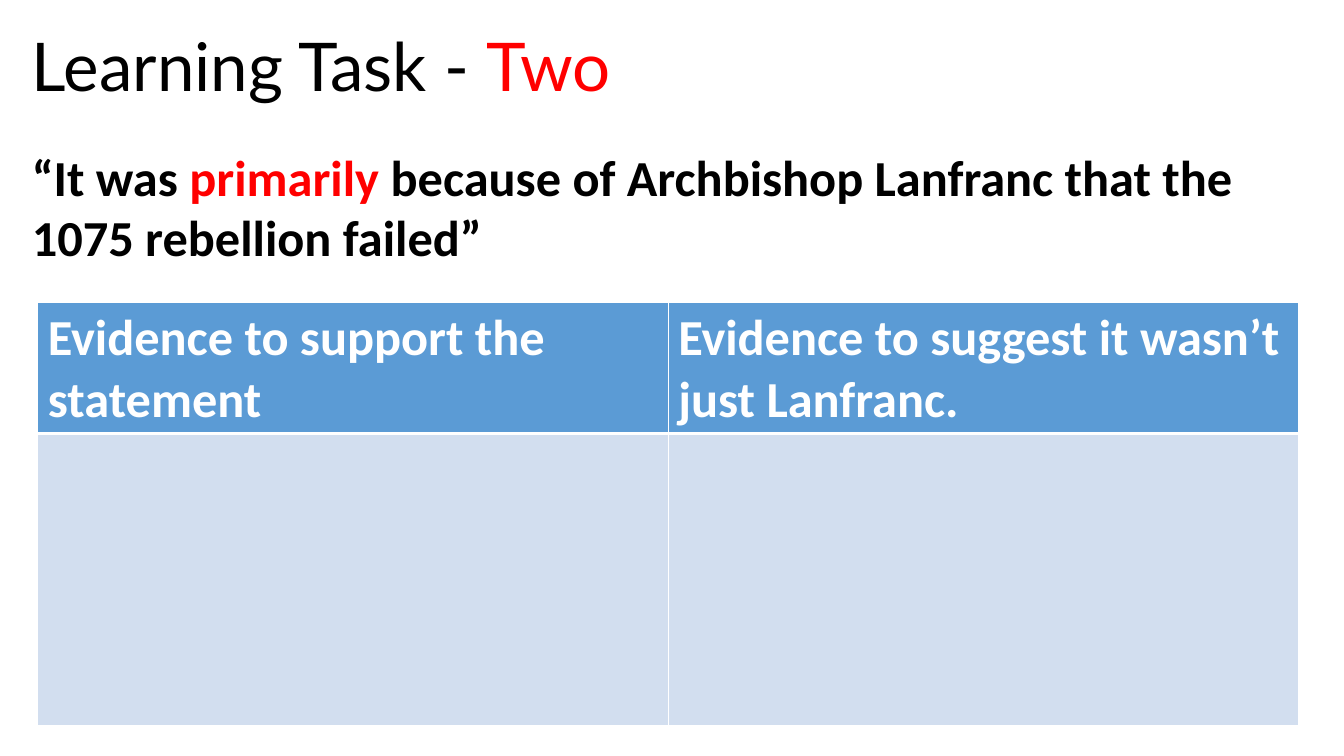
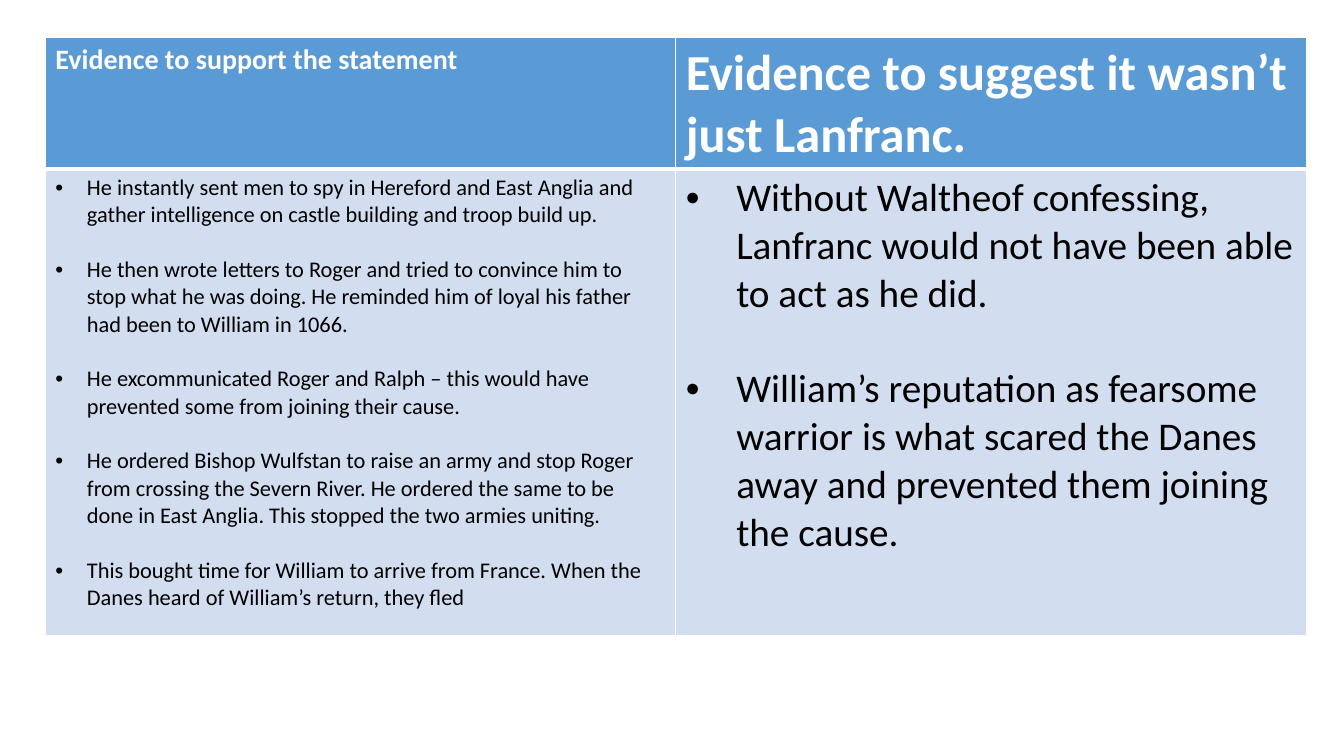
from dataclasses import dataclass

from lxml import etree
from pptx import Presentation
from pptx import util as u
from pptx.dml.color import RGBColor
from pptx.enum import text
from pptx.oxml import ns

W, H = 13.33, 7.5
COLS, ROWS = 160, 90
BLACK, WHITE, RED = "000000", "FFFFFF", "FF0000"
HEADER_FILL, BODY_FILL = "5B9BD5", "D2DEEF"
TITLE_FONT, FONT = "Lato", "Calibri"
LINE_SPACING = 1.22
THIN, THICK = 1, 3


@dataclass
class Box:
    left: float
    top: float
    width: float
    height: float

    def emu(self):
        return x(self.left), y(self.top), x(self.width), y(self.height)


@dataclass
class Style:
    size: float
    font: str = FONT
    bold: bool = False


@dataclass
class Span:
    text: str
    color: str = BLACK


@dataclass
class Column:
    header: str
    header_size: float = 36
    bullets: tuple[str, ...] = ()
    size: float = 16
    indent: float = 0


@dataclass
class Evidence:
    left: float
    top: float
    body_rows: float
    columns: tuple[Column, ...]
    width: float = 150.1
    header_rows: float = 15.6


def x(cols: float) -> int:
    return u.Inches(W * cols / COLS)


def y(rows: float) -> int:
    return u.Inches(H * rows / ROWS)


def rgb(value: str) -> RGBColor:
    return RGBColor.from_string(value)


def format_run(r, style: Style, color: str) -> None:
    r.font.size = u.Pt(style.size)
    r.font.name = style.font
    r.font.bold = style.bold
    r.font.color.rgb = rgb(color)


def add_text(s, box: Box, spans: list[Span], style: Style) -> None:
    tf = s.shapes.add_textbox(*box.emu()).text_frame
    tf.word_wrap = True
    tf.auto_size = text.MSO_AUTO_SIZE.SHAPE_TO_FIT_TEXT
    for span in spans:
        r = tf.paragraphs[0].add_run()
        r.text = span.text
        format_run(r, style, span.color)


def add_bullet(p, indent: float) -> None:
    pPr = p._p.get_or_add_pPr()
    pPr.set("marL", str(x(indent)))
    pPr.set("indent", str(-x(indent)))
    etree.SubElement(pPr, ns.qn("a:buFont"), typeface="Arial")
    etree.SubElement(pPr, ns.qn("a:buChar"), char="•")


def style_cell(cell, fill: str, top: float, bottom: float) -> None:
    cell.fill.solid()
    cell.fill.fore_color.rgb = rgb(fill)
    tcPr = cell._tc.get_or_add_tcPr()
    widths = {"a:lnL": THIN, "a:lnR": THIN, "a:lnT": top, "a:lnB": bottom}
    for i, (tag, width) in enumerate(widths.items()):
        ln = etree.Element(ns.qn(tag), w=str(u.Pt(width)))
        solid = etree.SubElement(ln, ns.qn("a:solidFill"))
        etree.SubElement(solid, ns.qn("a:srgbClr"), val=WHITE)
        tcPr.insert(i, ln)


def fill_header(cell, column: Column) -> None:
    style_cell(cell, HEADER_FILL, THIN, THICK)
    p = cell.text_frame.paragraphs[0]
    p.text = column.header
    format_run(p.runs[0], Style(column.header_size, bold=True), WHITE)


def fill_body(cell, column: Column) -> None:
    style_cell(cell, BODY_FILL, THICK, THIN)
    tf = cell.text_frame
    for i, bullet in enumerate(column.bullets):
        p = tf.add_paragraph() if i else tf.paragraphs[0]
        p.text = bullet
        if i:
            p.space_before = u.Pt(column.size * LINE_SPACING)
        add_bullet(p, column.indent)
        format_run(p.runs[0], Style(column.size), BLACK)


def add_evidence(s, evidence: Evidence) -> None:
    heights = evidence.header_rows, evidence.body_rows
    box = Box(evidence.left, evidence.top, evidence.width, sum(heights))
    count = len(evidence.columns)
    table = s.shapes.add_table(len(heights), count, *box.emu()).table
    for row, height in zip(table.rows, heights):
        row.height = y(height)
    for i, column in enumerate(evidence.columns):
        table.columns[i].width = x(evidence.width / count)
        fill_header(table.cell(0, i), column)
        fill_body(table.cell(1, i), column)


SUPPORT = "Evidence to support the statement"
AGAINST = "Evidence to suggest it wasn’t just Lanfranc."

TITLE = [Span("Learning Task - "), Span("Two", RED)]
QUOTE = [
    Span("“It was "),
    Span("primarily", RED),
    Span(" because of Archbishop Lanfranc that the 1075 rebellion failed”"),
]
TASK = Evidence(4.5, 36, 34.8, (Column(SUPPORT), Column(AGAINST)))
ANSWERS = Evidence(5.4, 4.5, 55.6, (
    Column(SUPPORT, 20, (
        "He instantly sent men to spy in Hereford and East Anglia and gather "
        "intelligence on castle building and troop build up.",
        "He then wrote letters to Roger and tried to convince him to stop what "
        "he was doing. He reminded him of loyal his father had been to William "
        "in 1066.",
        "He excommunicated Roger and Ralph – this would have prevented some "
        "from joining their cause.",
        "He ordered Bishop Wulfstan to raise an army and stop Roger from "
        "crossing the Severn River. He ordered the same to be done in East "
        "Anglia. This stopped the two armies uniting.",
        "This bought time for William to arrive from France. When the Danes "
        "heard of William’s return, they fled",
    ), 16, 3.75),
    Column(AGAINST, 36, (
        "Without Waltheof confessing, Lanfranc would not have been able to act "
        "as he did.",
        "William’s reputation as fearsome warrior is what scared the Danes away "
        "and prevented them joining the cause.",
    ), 28, 6),
))


def main() -> None:
    prs = Presentation()
    prs.slide_width, prs.slide_height = u.Inches(W), u.Inches(H)
    blank = prs.slide_layouts[6]

    s = prs.slides.add_slide(blank)
    add_text(s, Box(2.6, 2.3, 76.7, 10.9), TITLE, Style(48, TITLE_FONT))
    add_text(s, Box(2.6, 16.8, 151.8, 15.7), QUOTE, Style(36, bold=True))
    add_evidence(s, TASK)

    s = prs.slides.add_slide(blank)
    add_evidence(s, ANSWERS)

    prs.save("out.pptx")


if __name__ == "__main__":
    main()
